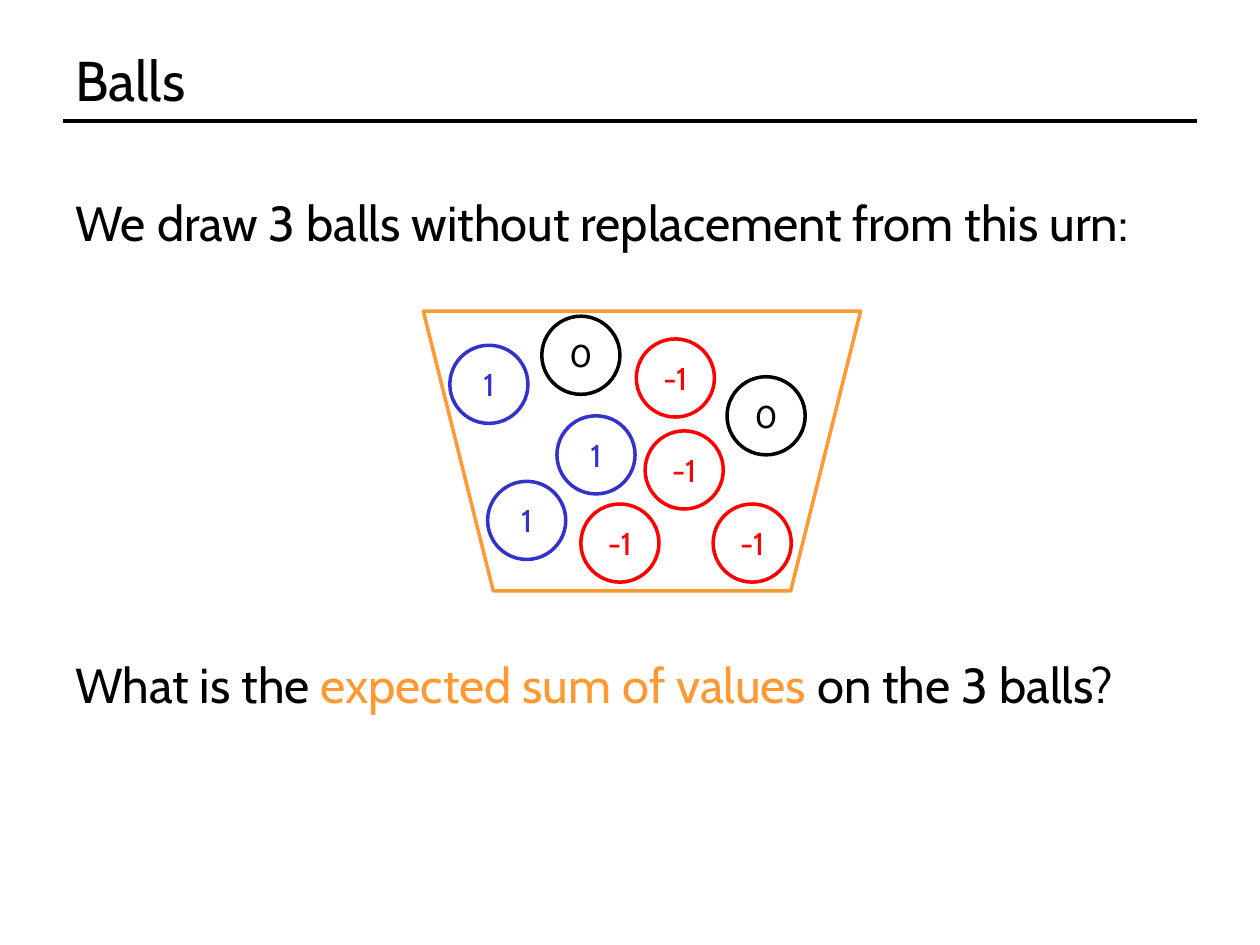
from dataclasses import dataclass

from lxml.etree import SubElement
from pptx import Presentation
from pptx.dml.color import RGBColor
from pptx.enum.shapes import MSO_CONNECTOR, MSO_SHAPE
from pptx.enum.text import MSO_ANCHOR, PP_ALIGN
from pptx.oxml.ns import qn
from pptx.slide import Slide
from pptx.util import Inches, Pt

COLORS = {"black": "000000", "orange": "FF9933", "red": "FF0000", "blue": "3333CC"}
VALUE_COLORS = {-1: "red", 0: "black", 1: "blue"}
FONT = "Cabin"
LEFT = 0.5
WIDTH = 9
BALL_SIZE = 0.62
OUTLINE = Pt(2)


@dataclass(frozen=True)
class Phrase:
    text: str
    color: str = "black"


@dataclass(frozen=True)
class Statement:
    top: float
    height: float
    size: int
    phrases: tuple[Phrase, ...]


@dataclass(frozen=True)
class Ball:
    left: float
    top: float
    value: int


STATEMENTS = (
    Statement(0.3, 0.66, 32, (Phrase("Balls"),)),
    Statement(1.48, 0.57, 28, (Phrase("We draw 3 balls without replacement from this urn:"),)),
    Statement(5.14, 0.57, 28, (
        Phrase("What is the "),
        Phrase("expected sum of values", "orange"),
        Phrase(" on the 3 balls?"),
    )),
)

BALLS = (
    Ball(4.61, 4, -1),
    Ball(3.57, 2.74, 1),
    Ball(3.87, 3.82, 1),
    Ball(4.42, 3.3, 1),
    Ball(5.05, 2.69, -1),
    Ball(5.66, 4, -1),
    Ball(5.77, 2.99, 0),
    Ball(4.3, 2.51, 0),
    Ball(5.12, 3.42, -1),
)


def rgb(color: str) -> RGBColor:
    return RGBColor.from_string(COLORS[color])


def draw_statement(slide: Slide, statement: Statement) -> None:
    box = slide.shapes.add_textbox(
        Inches(LEFT), Inches(statement.top), Inches(WIDTH), Inches(statement.height)
    )
    frame = box.text_frame
    frame.word_wrap = True
    frame.vertical_anchor = MSO_ANCHOR.MIDDLE
    paragraph = frame.paragraphs[0]
    paragraph.font.name = FONT
    paragraph.font.size = Pt(statement.size)
    for phrase in statement.phrases:
        run = paragraph.add_run()
        run.text = phrase.text
        run.font.color.rgb = rgb(phrase.color)


def draw_title_rule(slide: Slide) -> None:
    rule = slide.shapes.add_connector(
        MSO_CONNECTOR.STRAIGHT,
        Inches(LEFT), Inches(0.96), Inches(LEFT + WIDTH), Inches(0.96),
    )
    rule.line.color.rgb = rgb("black")
    rule.line.width = OUTLINE
    SubElement(rule.element.spPr, qn("a:effectLst"))


def draw_outline(
    slide: Slide, kind: MSO_SHAPE, left: float, top: float,
    width: float, height: float, color: str,
):
    outline = slide.shapes.add_shape(
        kind, Inches(left), Inches(top), Inches(width), Inches(height)
    )
    outline.shadow.inherit = False
    outline.fill.background()
    outline.line.color.rgb = rgb(color)
    outline.line.width = OUTLINE
    return outline


def draw_urn(slide: Slide) -> None:
    urn = draw_outline(slide, MSO_SHAPE.TRAPEZOID, 3.36, 2.47, 3.47, 2.22, "orange")
    urn.rotation = 180


def draw_ball(slide: Slide, ball: Ball) -> None:
    color = VALUE_COLORS[ball.value]
    circle = draw_outline(
        slide, MSO_SHAPE.OVAL, ball.left, ball.top, BALL_SIZE, BALL_SIZE, color
    )
    frame = circle.text_frame
    frame.word_wrap = False
    frame.vertical_anchor = MSO_ANCHOR.MIDDLE
    paragraph = frame.paragraphs[0]
    paragraph.text = str(ball.value)
    paragraph.alignment = PP_ALIGN.CENTER
    paragraph.font.name = FONT
    paragraph.font.size = Pt(18)
    paragraph.font.color.rgb = rgb(color)


def main() -> None:
    presentation = Presentation()
    presentation.slide_width = Inches(10)
    presentation.slide_height = Inches(7.5)
    slide = presentation.slides.add_slide(presentation.slide_layouts[6])
    draw_title_rule(slide)
    for statement in STATEMENTS:
        draw_statement(slide, statement)
    draw_urn(slide)
    for ball in BALLS:
        draw_ball(slide, ball)
    presentation.save("out.pptx")


if __name__ == "__main__":
    main()
